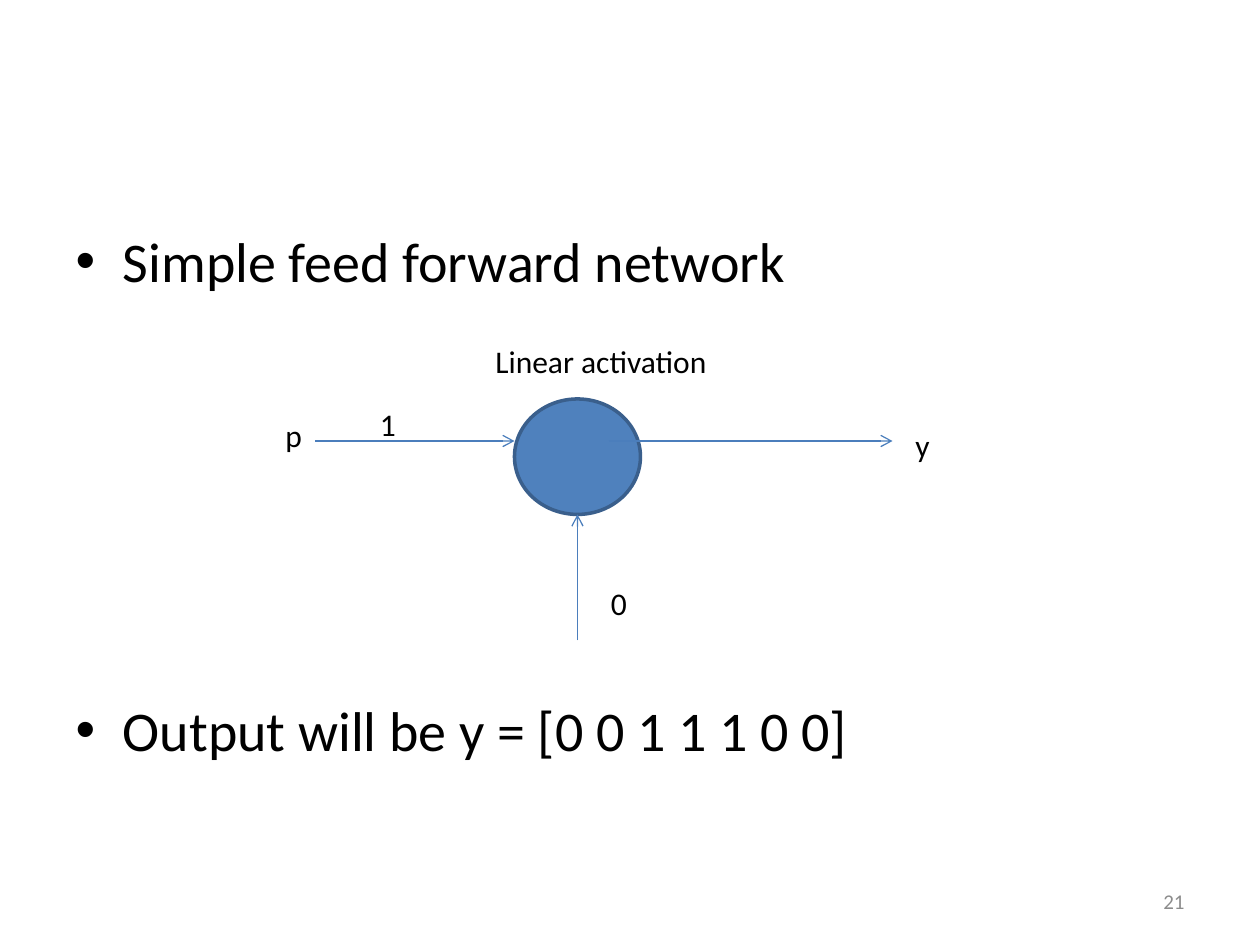
import pptx
import pptx.dml.color
import pptx.enum.shapes
import pptx.enum.text
import pptx.oxml.ns
import pptx.util
from lxml import etree

Pt = pptx.util.Pt
RGBColor = pptx.dml.color.RGBColor
Align = pptx.enum.text.PP_ALIGN
Anchor = pptx.enum.text.MSO_ANCHOR

BLACK = RGBColor(0x00, 0x00, 0x00)
GREY = RGBColor(0x8C, 0x8C, 0x8C)
NEURON_FILL = RGBColor(0x4F, 0x81, 0xBD)
NEURON_EDGE = RGBColor(0x3A, 0x5F, 0x8C)
SIGNAL = RGBColor(0x4B, 0x7E, 0xBC)


class NetworkSlide:
    font_name = "Calibri"

    def __init__(self, presentation):
        self.slide = presentation.slides.add_slide(presentation.slide_layouts[1])
        title = self.slide.shapes.title
        title.element.getparent().remove(title.element)

    def style(self, paragraph, size, color):
        paragraph.font.name = self.font_name
        paragraph.font.size = Pt(size)
        paragraph.font.color.rgb = color

    def bullets(self, left, top, width, height, items):
        body = self.slide.placeholders[1]
        body.left, body.top = Pt(left), Pt(top)
        body.width, body.height = Pt(width), Pt(height)
        frame = body.text_frame
        frame.auto_size = pptx.enum.text.MSO_AUTO_SIZE.NONE
        frame.text = "\n".join(text for text, _ in items)
        for paragraph, (_, space) in zip(frame.paragraphs, items):
            paragraph.space_before = Pt(space)
            self.style(paragraph, 32, BLACK)

    def neuron(self, left, top, width, height):
        neuron = self.slide.shapes.add_shape(
            pptx.enum.shapes.MSO_SHAPE.OVAL, Pt(left), Pt(top), Pt(width), Pt(height))
        neuron.shadow.inherit = False
        neuron.fill.solid()
        neuron.fill.fore_color.rgb = NEURON_FILL
        neuron.line.color.rgb = NEURON_EDGE
        neuron.line.width = Pt(2)

    def arrow(self, x1, y1, x2, y2):
        arrow = self.slide.shapes.add_connector(
            pptx.enum.shapes.MSO_CONNECTOR.STRAIGHT, Pt(x1), Pt(y1), Pt(x2), Pt(y2))
        arrow.line.color.rgb = SIGNAL
        arrow.line.width = Pt(0.75)
        qn = pptx.oxml.ns.qn
        etree.SubElement(arrow.line._get_or_add_ln(), qn("a:tailEnd"), type="arrow")
        etree.SubElement(arrow.element.spPr, qn("a:effectLst"))

    def label(self, text, left, top, width, height=29, size=18, color=BLACK,
              align=Align.LEFT, anchor=Anchor.TOP, wrap=True):
        box = self.slide.shapes.add_textbox(Pt(left), Pt(top), Pt(width), Pt(height))
        frame = box.text_frame
        frame.word_wrap = wrap
        frame.vertical_anchor = anchor
        frame.text = text
        paragraph = frame.paragraphs[0]
        paragraph.alignment = align
        self.style(paragraph, size, color)


def main():
    presentation = pptx.Presentation()
    presentation.slide_width, presentation.slide_height = Pt(720), Pt(540)
    network = NetworkSlide(presentation)

    network.bullets(36, 126, 648, 356.4, [
        ("Simple feed forward network", 6.4),
        ("Output will be y = [0 0 1 1 1 0 0]", 229.5),
    ])

    network.neuron(294, 228, 72, 66)
    network.arrow(330, 366, 330, 294)
    network.arrow(180, 252, 294, 252)
    network.arrow(348, 252, 510, 252)

    network.label("1", 210, 228, 42)
    network.label("0", 342, 330, 24, wrap=False)
    network.label("y", 516, 240, 18)
    network.label("p", 156, 234, 24.5, wrap=False)
    network.label("Linear activation", 276, 192, 138)
    network.label("21", 516, 500.5, 168, size=12, color=GREY,
                  align=Align.RIGHT, anchor=Anchor.MIDDLE)

    presentation.save("out.pptx")


if __name__ == "__main__":
    main()
